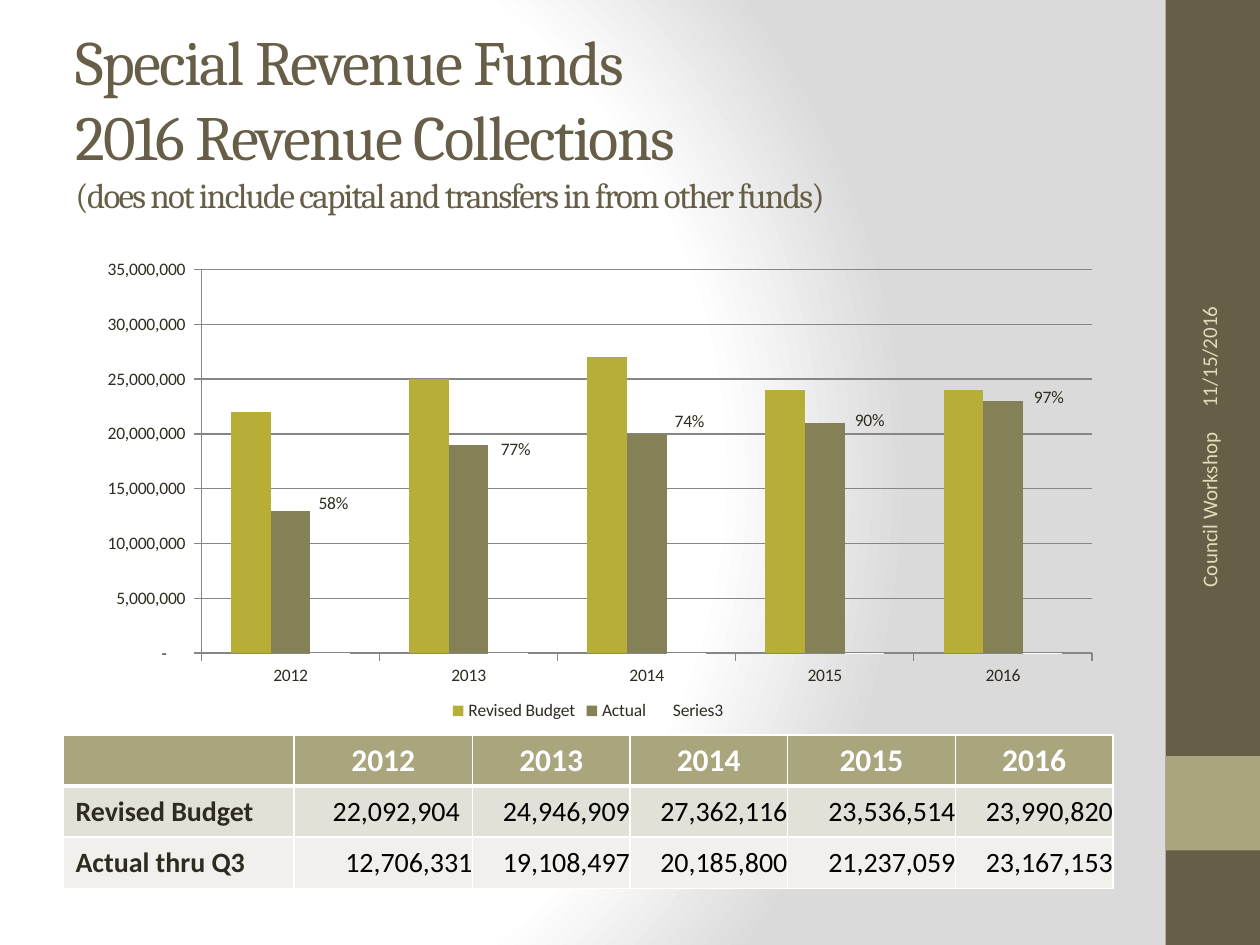
from pptx import Presentation
from pptx import util as u
from pptx import oxml
from pptx.chart import data as chart_data
from pptx.dml.color import RGBColor
from pptx.enum import chart as charts, shapes, text
from pptx.oxml import ns

Pt = u.Pt
WHITE = RGBColor(0xFF, 0xFF, 0xFF)
BLACK = RGBColor(0, 0, 0)
INK = RGBColor(0x2F, 0x2B, 0x20)
BROWN = RGBColor(0x67, 0x5E, 0x47)
TAN = RGBColor(0xA9, 0xA5, 0x7C)
CREAM = RGBColor(0xDF, 0xDC, 0xB7)
BAND_DARK = RGBColor(0xE2, 0xE1, 0xD7)
BAND_LIGHT = RGBColor(0xF1, 0xF0, 0xEC)
OLIVE = RGBColor(0xB7, 0xAE, 0x38)
MOSS = RGBColor(0x85, 0x81, 0x57)
GREY = RGBColor(0x86, 0x86, 0x86)

YEARS = ["2012", "2013", "2014", "2015", "2016"]
BUDGET = [22092904, 24946909, 27362116, 23536514, 23990820]
ACTUAL = [12706331, 19108497, 20185800, 21237059, 23167153]
SHARE = [actual / budget for actual, budget in zip(ACTUAL, BUDGET)]
SERIES = [("Revised Budget", BUDGET, -6, OLIVE, "#,##0"),
          ("Actual", ACTUAL, -6, MOSS, "#,##0"),
          ("Series3", SHARE, 2, WHITE, "0%")]
PLOT_PERCENT = (13.2, 3.7, 84.8, 81)
LABEL_SHIFT_PERCENT = [(0.3, -31.5), (0.7, -43), (0.3, -48.8), (0.5, -49), (0.6, -54)]
AXIS_FORMAT = '_(* #,##0_);_(* \\(#,##0\\);_(* "-"??_);_(@_)'
TABLE_ROWS = [("Revised Budget", BUDGET, BAND_DARK), ("Actual thru Q3", ACTUAL, BAND_LIGHT)]
COLUMN_WIDTHS = [132, 102, 90, 90, 96, 90]
ROW_HEIGHT = 29.2
TITLE = [("Special Revenue Funds\v2016 Revenue Collections\v", 36),
         ("(does not include capital and transfers in from other funds)", 20)]
SIDE_NOTES = [("11/15/2016", 594.7, 129.6, 192.2, text.PP_ALIGN.LEFT),
              ("Council Workshop", 597.6, 319, 186.5, text.PP_ALIGN.RIGHT)]
BANDS = [(0, 540, BROWN), (432, 54, TAN)]
LEFT, WIDTH = 36, 600


def write(frame, content, size, color, font="Calibri", bold=False,
          align=text.PP_ALIGN.LEFT, spacing=None):
    para = frame.paragraphs[0]
    para.alignment = align
    start = len(para.runs)
    for index, line in enumerate(content.split("\v")):
        if index:
            para.add_line_break()
        if line:
            para.add_run().text = line
    for span in para.runs[start:]:
        span.font.size, span.font.name, span.font.bold = Pt(size), font, bold
        span.font.color.rgb = color
        if spacing:
            span.font._element.set("spc", str(spacing))


def add_box(page, left, top, width, height):
    box = page.shapes.add_textbox(Pt(left), Pt(top), Pt(width), Pt(height))
    box.text_frame.word_wrap = True
    box.text_frame.vertical_anchor = text.MSO_ANCHOR.MIDDLE
    return box


def manual_layout(x, y, *size):
    target = '<c:layoutTarget val="inner"/>' if size else ""
    modes = '<c:xMode val="edge"/><c:yMode val="edge"/>' if size else ""
    extent = "".join(f'<c:{tag} val="{value / 100}"/>'
                     for tag, value in zip("xywh", (x, y) + size))
    return oxml.parse_xml(
        f'<c:layout {ns.nsdecls("c")}><c:manualLayout>{target}{modes}{extent}'
        '</c:manualLayout></c:layout>')


def paint_background(page):
    page.background.fill.solid()
    solid = page._element.xpath("./p:cSld/p:bg/p:bgPr/a:solidFill")[0]
    stops = "".join(f'<a:gs pos="{position}"><a:srgbClr val="{color}"/></a:gs>'
                    for position, color in [(0, "FFFFFF"), (75000, "FFFFFF"), (100000, "DADADA")])
    solid.getparent().replace(solid, oxml.parse_xml(
        f'<a:gradFill {ns.nsdecls("a")} rotWithShape="1"><a:gsLst>{stops}</a:gsLst>'
        '<a:path path="circle"><a:fillToRect l="20000" t="50000" r="100000" b="50000"/>'
        '</a:path></a:gradFill>'))


def place_share_labels(series):
    for index, shift in enumerate(LABEL_SHIFT_PERCENT):
        series.points[index].data_label.position = charts.XL_LABEL_POSITION.CENTER
        label = series._element.xpath("./c:dLbls/c:dLbl")[index]
        label.insert(1, manual_layout(*shift))
        label.insert(2, oxml.parse_xml(
            f'<c:numFmt {ns.nsdecls("c")} formatCode="0%" sourceLinked="0"/>'))
    for leader in series._element.xpath("./c:dLbls/c:showLeaderLines"):
        leader.set("val", "0")
    series._element.xpath("./c:dLbls")[0].append(oxml.parse_xml(
        f'<c:extLst {ns.nsdecls("c")}><c:ext uri="{{CE6537A1-D6FC-4f65-9D91-7224C49458BB}}" '
        'xmlns:c15="http://schemas.microsoft.com/office/drawing/2012/chart">'
        '<c15:showLeaderLines val="0"/></c:ext></c:extLst>'))


def add_revenue_chart(page):
    source = chart_data.CategoryChartData()
    source.categories = YEARS
    for name, values, digits, _, number_format in SERIES:
        source.add_series(name, [round(value, digits) for value in values], number_format)
    chart = page.shapes.add_chart(charts.XL_CHART_TYPE.COLUMN_CLUSTERED, Pt(LEFT), Pt(144),
                                  Pt(WIDTH), Pt(270.7), source).chart
    chart.has_title = False
    chart.font.size, chart.font.name = Pt(10), "Calibri"
    chart.font.color.rgb = INK
    chart.has_legend = True
    chart.legend.position = charts.XL_LEGEND_POSITION.BOTTOM
    chart.legend.include_in_layout = False
    plot = chart.plots[0]
    plot.gap_width, plot.overlap, plot.vary_by_categories = 150, 0, False
    for series, (_, _, _, color, _) in zip(plot.series, SERIES):
        series.format.fill.solid()
        series.format.fill.fore_color.rgb = color
    place_share_labels(plot.series[2])
    axis = chart.value_axis
    axis.minimum_scale, axis.maximum_scale, axis.major_unit = 0, 35000000, 5000000
    axis.tick_labels.number_format = AXIS_FORMAT
    axis.tick_labels.number_format_is_linked = False
    axis.has_major_gridlines = True
    for part in (axis, chart.category_axis):
        part.major_tick_mark = charts.XL_TICK_MARK.OUTSIDE
    for part in (axis, chart.category_axis, axis.major_gridlines):
        part.format.line.color.rgb = GREY
        part.format.line.width = Pt(0.75)
    area = chart._chartSpace.xpath("./c:chart/c:plotArea")[0]
    for old in area.xpath("./c:layout"):
        area.remove(old)
    area.insert(0, manual_layout(*PLOT_PERCENT))


def style_cell(cell, fill, top=1, bottom=1):
    properties = cell._tc.get_or_add_tcPr()
    for side, weight in (("L", 1), ("R", 1), ("T", top), ("B", bottom)):
        properties.append(oxml.parse_xml(
            f'<a:ln{side} {ns.nsdecls("a")} w="{Pt(weight)}"><a:solidFill>'
            f'<a:srgbClr val="{WHITE}"/></a:solidFill></a:ln{side}>'))
    cell.fill.solid()
    cell.fill.fore_color.rgb = fill


def add_revenue_table(page):
    table = page.shapes.add_table(3, 6, Pt(LEFT), Pt(420), Pt(WIDTH), Pt(3 * ROW_HEIGHT)).table
    table.first_row = table.horz_banding = False
    for column, width in zip(table.columns, COLUMN_WIDTHS):
        column.width = Pt(width)
    for row in table.rows:
        row.height = Pt(ROW_HEIGHT)
    for index, heading in enumerate([""] + YEARS):
        cell = table.cell(0, index)
        style_cell(cell, TAN, bottom=3)
        write(cell.text_frame, heading, 18, WHITE, bold=True, align=text.PP_ALIGN.CENTER)
    for row, (name, values, fill) in enumerate(TABLE_ROWS, 1):
        for column, value in enumerate([name] + values):
            cell = table.cell(row, column)
            style_cell(cell, fill, top=3 if row == 1 else 1)
            cell.vertical_anchor = text.MSO_ANCHOR.MIDDLE
            if column == 0:
                write(cell.text_frame, value, 16, INK, bold=True)
                continue
            cell.margin_left = cell.margin_top = cell.margin_bottom = 0
            cell.margin_right = Pt(7.2 if (row, column) == (1, 1) else 0)
            write(cell.text_frame, f"{value:,}", 16, BLACK, align=text.PP_ALIGN.RIGHT)


def main():
    deck = Presentation()
    deck.slide_width, deck.slide_height = Pt(720), Pt(540)
    page = deck.slides.add_slide(deck.slide_layouts[6])
    paint_background(page)
    for top, height, color in BANDS:
        band = page.shapes.add_shape(shapes.MSO_SHAPE.RECTANGLE, Pt(666), Pt(top), Pt(54), Pt(height))
        band.shadow.inherit = False
        band.fill.solid()
        band.fill.fore_color.rgb = color
        band.line.fill.background()
    title = add_box(page, LEFT, 15.8, WIDTH, 104.4)
    for content, size in TITLE:
        write(title.text_frame, content, size, BROWN, font="Cambria", spacing=-100)
    add_revenue_table(page)
    for content, left, top, width, align in SIDE_NOTES:
        note = add_box(page, left, top, width, 28.8)
        note.rotation = 270
        write(note.text_frame, content, 12, CREAM, align=align)
    add_revenue_chart(page)
    deck.save("out.pptx")


if __name__ == "__main__":
    main()
